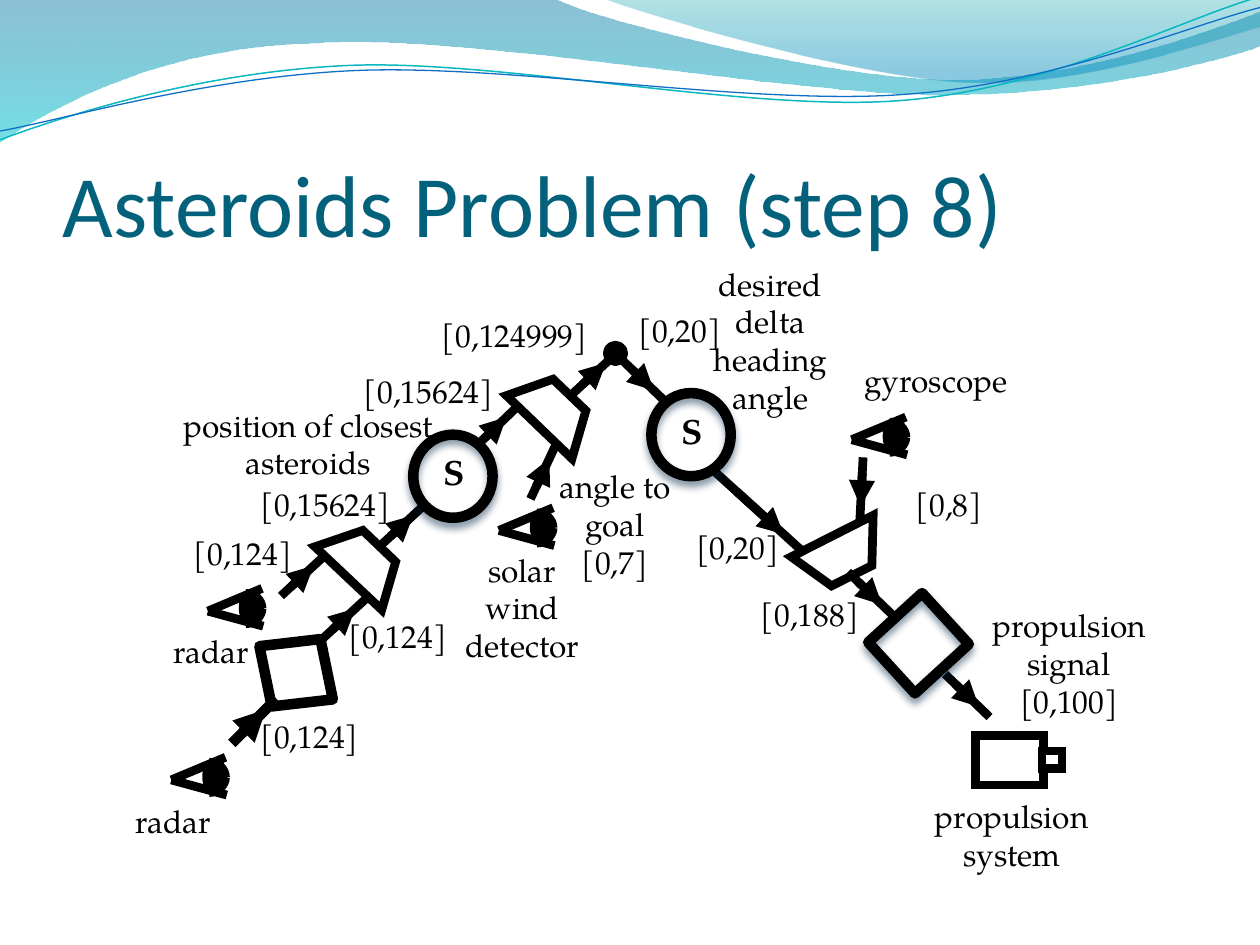
from lxml import etree
from pptx import Presentation, util as u
from pptx.dml.color import RGBColor
from pptx.enum import shapes, text
from pptx.oxml import ns

COLORS = {"ink": "000000", "paper": "FFFFFF", "title": "04617B", "shade": "042747",
          "teal_line": "0AB8BF", "blue_line": "0F6FC6",
          "sea": "0074A1", "aqua": "00C6CF", "mist": "00A1A9", "sky": "008BBF"}
BODY = "TeX Gyre Pagella"
LEFT, CENTER = text.PP_ALIGN.LEFT, text.PP_ALIGN.CENTER

BROAD_WAVE = [
    [(0, 0)], [(4.4, -0.01)],
    [(4.76, 0.17), (6.64, 0.63), (7.58, 0.63)], [(8.53, 0.63), (9.58, 0.26), (10, 0.09)],
    [(10.01, 0.36)],
    [(9.83, 0.44), (8.7, 0.76), (7.46, 0.75)], [(6.22, 0.75), (3.82, 0.28), (2.57, 0.34)],
    [(1.29, 0.36), (0.46, 0.83), (-0.01, 1.13)]]
PALE_WAVE = [
    [(4.79, -0.01)], [(5.09, 0.11), (6.82, 0.62), (7.69, 0.65)],
    [(8.56, 0.69), (9.61, 0.32), (10, 0.21)], [(10, 0)]]
TEAL_WAVE = [
    [(0, 1.11)], [(0.48, 0.93), (1.58, 0.57), (2.77, 0.52)],
    [(3.95, 0.47), (5.93, 0.89), (7.13, 0.8)], [(8.33, 0.71), (9.38, 0.15), (9.98, -0.02)]]
BLUE_WAVE = [
    [(0, 1.04)], [(0.47, 0.96), (1.64, 0.61), (2.83, 0.56)],
    [(4.03, 0.51), (5.97, 0.84), (7.17, 0.75)], [(8.36, 0.67), (9.41, 0.21), (10, 0.06)]]
CORNEA = [
    [[(0.3, -0.14)], [(0.37, -0.14), (0.43, -0.09), (0.43, -0.02)]],
    [[(0.43, -0.02)], [(0.43, 0.04), (0.37, 0.1), (0.3, 0.1)]]]

SENSORS = [(3.96, 4.21), (6.76, 3.49), (1.36, 6.19), (1.65, 4.85)]
COMBINERS = [
    [(4.54, 3.64), (4.65, 3.26), (4.39, 3.01), (4.02, 3.14)],
    [(6.28, 4.42), (6.6, 4.65), (6.92, 4.49), (6.93, 4.09)],
    [(3.03, 4.84), (3.14, 4.46), (2.88, 4.21), (2.5, 4.34)]]
FLOWS = [
    ((4.55, 3.12), (4.81, 2.88), 5), ((4.92, 2.84), (5.19, 3.1), 5),
    ((6.73, 4.54), (7, 4.8), 5), ((7.5, 5.35), (7.77, 5.61), 5),
    ((4.21, 3.96), (4.36, 3.64), 5), ((3.77, 3.55), (4.02, 3.31), 5),
    ((3.02, 4.33), (3.28, 4.09), 5), ((6.85, 3.63), (6.83, 4.02), 5),
    ((5.68, 3.75), (6.22, 4.24), 5), ((1.84, 5.9), (2.11, 5.63), 6),
    ((2.56, 5.07), (2.82, 4.83), 5), ((2.23, 4.73), (2.49, 4.49), 5)]
LABELS = [
    (1.28, 4.97, 1.38, 0.4, LEFT, ["radar"]),
    (0.98, 6.32, 1.39, 0.4, LEFT, ["radar"]),
    (5.4, 2.05, 1.43, 1.31, CENTER, ["desired delta heading angle"]),
    (1.04, 3.17, 2.81, 0.71, CENTER, ["position of closest asteroids"]),
    (4.31, 3.66, 1.14, 1.01, CENTER, ["angle to goal", "[0,7]"]),
    (7.06, 6.28, 1.94, 0.71, CENTER, ["propulsion system"]),
    (7.72, 4.76, 1.53, 1.01, CENTER, ["propulsion signal", "[0,100]"]),
    (3.58, 4.32, 1.13, 1.01, CENTER, ["solar wind detector"]),
    (6.76, 2.82, 1.38, 0.4, LEFT, ["gyroscope"]),
    (4.97, 2.42, 0.94, 0.4, LEFT, ["[0,20]"]),
    (5.43, 4.14, 1.14, 0.4, LEFT, ["[0,20]"]),
    (1.97, 3.8, 1.44, 0.4, LEFT, ["[0,15624]"]),
    (2.79, 2.9, 1.44, 0.4, LEFT, ["[0,15624]"]),
    (1.44, 4.19, 1.44, 0.4, LEFT, ["[0,124]"]),
    (2.67, 4.85, 1.44, 0.4, LEFT, ["[0,124]"]),
    (1.97, 5.64, 1.44, 0.4, LEFT, ["[0,124]"]),
    (3.41, 2.46, 1.36, 0.4, LEFT, ["[0,124999]"]),
    (7.17, 3.8, 1.62, 0.4, LEFT, ["[0,8]"]),
    (5.94, 4.67, 1.15, 0.4, LEFT, ["[0,188]"])]


def rgb(name):
    """Return the named colour."""
    return RGBColor.from_string(COLORS[name])


def apply(target, formats):
    """Set every attribute of a format dict on the target."""
    for key, value in formats.items():
        setattr(target, key, value)


def add_xml(parent, tag, **values):
    """Append a drawing element and return it."""
    return etree.SubElement(parent, ns.qn(tag), **values)


def style(shape, fill=None, line="ink", width=5, miter=False, shadow=False):
    """Give a shape its fill, outline and shadow."""
    shape.shadow.inherit = False
    if fill:
        shape.fill.solid()
        shape.fill.fore_color.rgb = rgb(fill)
    else:
        shape.fill.background()
    if line:
        shape.line.color.rgb = rgb(line)
        shape.line.width = u.Pt(width)
    else:
        shape.line.fill.background()
    if miter:
        add_xml(shape.line._get_or_add_ln(), "a:miter", lim="800000")
    if shadow:
        effects = shape._element.spPr.find(ns.qn("a:effectLst"))
        cast = add_xml(effects, "a:outerShdw", blurRad=str(u.Pt(4.5)), dist=str(u.Pt(3)),
                       dir="5400000", rotWithShape="0")
        add_xml(add_xml(cast, "a:srgbClr", val=COLORS["shade"]), "a:alpha", val="48000")


def outline(slide, segments, close=True, **look):
    """Draw a freeform whose segments hold one point (line) or three (curve)."""
    track = [(u.Inches(x), u.Inches(y)) for segment in segments for x, y in segment]
    builder = slide.shapes.build_freeform(*track[0], scale=1.0)
    builder.add_line_segments(track[1:], close=close)
    shape = builder.convert_to_shape()
    edges = iter(list(shape._element.iter(ns.qn("a:lnTo"))))
    for segment in segments[1:]:
        run = [next(edges) for _ in segment]
        if len(run) == 3:
            bend = etree.Element(ns.qn("a:cubicBezTo"))
            run[0].addprevious(bend)
            for edge in run:
                bend.append(edge[0])
                edge.getparent().remove(edge)
    style(shape, **look)
    return shape


def gradient_wave(slide, segments, stops):
    """Draw a translucent wave shaded from top to bottom."""
    wave = outline(slide, segments, line=None)
    wave.fill.gradient()
    wave.fill.gradient_angle = 270
    for stop, (position, color, opacity) in zip(wave.fill.gradient_stops, stops):
        stop.position = position
        stop.color.rgb = rgb(color)
        add_xml(stop._gs.find(ns.qn("a:srgbClr")), "a:alpha", val=str(opacity * 1000))


def node(slide, kind, box, rotation=0, **look):
    """Draw a preset shape in a box given in inches."""
    shape = slide.shapes.add_shape(kind, *map(u.Inches, box))
    shape.rotation = rotation
    style(shape, **look)


def stroke(slide, start, end, width=5, arrow=False):
    """Draw a straight line, with an arrowhead if asked."""
    line = slide.shapes.add_connector(shapes.MSO_CONNECTOR.STRAIGHT,
                                      *map(u.Inches, (*start, *end)))
    line.line.width = u.Pt(width)
    line.line.color.rgb = rgb("ink")
    if arrow:
        add_xml(line.line._get_or_add_ln(), "a:tailEnd", type="triangle")
    add_xml(line._element.spPr, "a:effectLst")


def flow(slide, start, end, width):
    """Draw a line with an arrowhead partway along it."""
    stroke(slide, start, end, width, arrow=True)
    shift = [0.31 * (b - a) for a, b in zip(start, end)]
    stroke(slide, *[[p + d for p, d in zip(point, shift)] for point in (start, end)], width)


def sensor(slide, x, y):
    """Draw an eye whose corner is at x, y."""
    stroke(slide, (x + 0.43, y - 0.18), (x, y))
    stroke(slide, (x, y), (x + 0.44, y + 0.12))
    for arc in CORNEA:
        outline(slide, [[(x + dx, y + dy) for dx, dy in part] for part in arc], close=False)
    node(slide, shapes.MSO_SHAPE.OVAL, (x + 0.28, y - 0.14, 0.13, 0.23), fill="ink")


def label(slide, box, align, lines, font=BODY, size=18, bold=False, color="ink", **frame):
    """Write wrapped paragraphs in a box given in inches."""
    words = slide.shapes.add_textbox(*map(u.Inches, box)).text_frame
    apply(words, {"word_wrap": True, **frame})
    words.text = "\n".join(lines)
    for paragraph in words.paragraphs:
        paragraph.alignment = align
        for run in paragraph.runs:
            apply(run.font, {"name": font, "size": u.Pt(size), "bold": bold})
            run.font.color.rgb = rgb(color)


def summing_node(slide, x, y):
    """Draw a ringed S."""
    node(slide, shapes.MSO_SHAPE.OVAL, (x, y, 0.63, 0.66), width=6, shadow=True)
    label(slide, (x + 0.14, y + 0.08, 0.54, 0.44), LEFT, ["S"], size=20, bold=True)


def main():
    """Build the slide and save it."""
    deck = Presentation()
    apply(deck, {"slide_width": u.Inches(10), "slide_height": u.Inches(7.5)})
    slide = deck.slides.add_slide(deck.slide_layouts[6])
    gradient_wave(slide, BROAD_WAVE, [(0, "sea", 45), (1, "aqua", 55)])
    gradient_wave(slide, PALE_WAVE, [(0, "mist", 30), (0.8, "sky", 45)])
    outline(slide, TEAL_WAVE, close=False, line="teal_line", width=0.85)
    outline(slide, BLUE_WAVE, close=False, line="blue_line", width=0.75)
    label(slide, (0.5, 0.77, 9, 1.25), LEFT, ["Asteroids Problem (step 8)"],
          font="Calibri", size=50, color="title", vertical_anchor=text.MSO_ANCHOR.BOTTOM,
          margin_left=0, margin_right=0, margin_bottom=0)
    for corners in COMBINERS:
        outline(slide, [[corner] for corner in corners], fill="paper", miter=True)
    for start, end, width in FLOWS:
        flow(slide, start, end, width)
    for corner in SENSORS:
        sensor(slide, *corner)
    node(slide, shapes.MSO_SHAPE.OVAL, (4.82, 2.74, 0.13, 0.13), fill="ink")
    for thruster in ((7.74, 5.84, 0.54, 0.39), (8.27, 5.96, 0.16, 0.14)):
        node(slide, shapes.MSO_SHAPE.RECTANGLE, thruster, fill="paper", miter=True)
    node(slide, shapes.MSO_SHAPE.RECTANGLE, (7, 4.83, 0.58, 0.55), 317.5, width=6, shadow=True)
    node(slide, shapes.MSO_SHAPE.DIAMOND, (1.99, 5.01, 0.72, 0.66), 35.9, width=6)
    for corner in ((5.17, 3.12), (3.28, 3.45)):
        summing_node(slide, *corner)
    for *box, align, lines in LABELS:
        label(slide, box, align, lines)
    deck.save("out.pptx")


if __name__ == "__main__":
    main()
